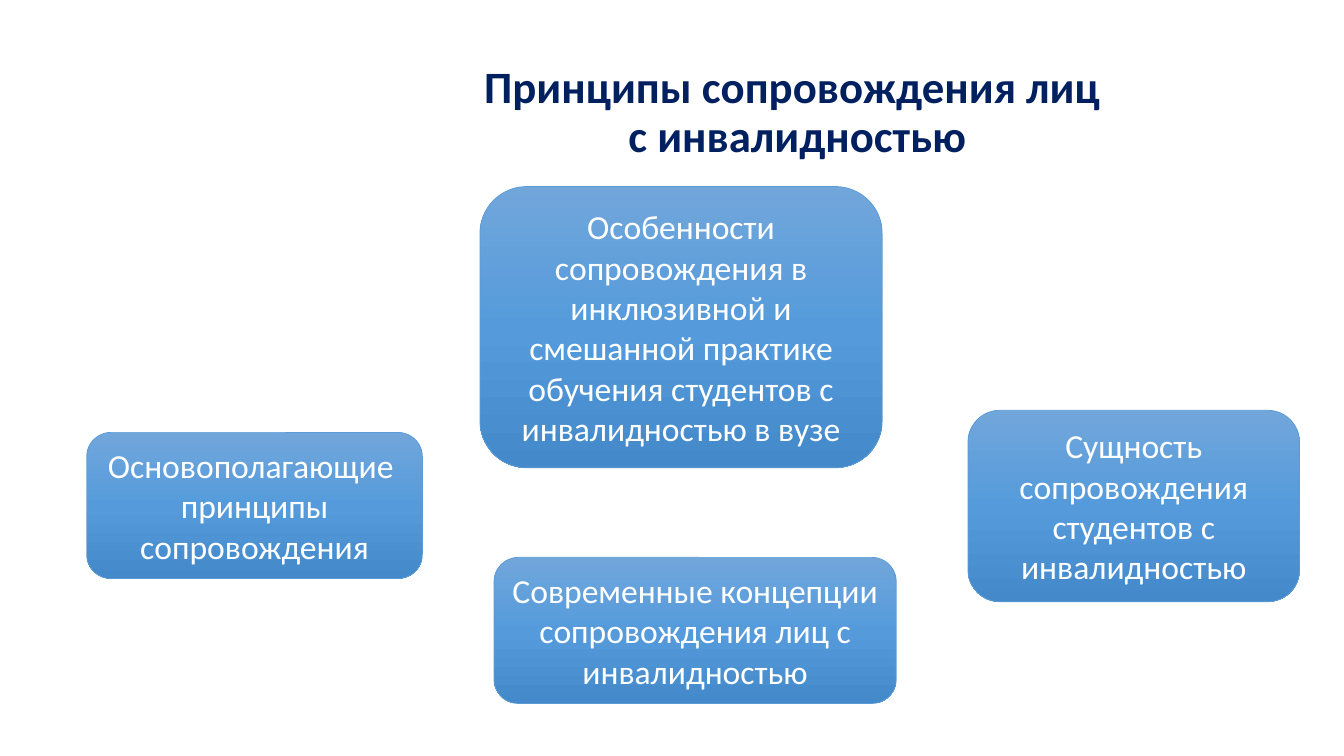
"""Build the slide on principles of supporting people with disabilities."""
from copy import deepcopy
from dataclasses import dataclass

from pptx import Presentation
from pptx.dml.color import RGBColor
from pptx.enum.shapes import MSO_SHAPE
from pptx.enum.text import MSO_ANCHOR, MSO_AUTO_SIZE, PP_ALIGN
from pptx.slide import Slide
from pptx.text.text import TextFrame
from pptx.util import Inches, Pt

SLIDE_WIDTH = Inches(13.33)
SLIDE_HEIGHT = Inches(7.5)
COLORS = {
    "title": "002060",
    "text": "FFFFFF",
    "top": "71A6DB",
    "middle": "559BDB",
    "bottom": "448ACA",
    "outline": "5B9BD5",
}


@dataclass(frozen=True)
class Area:
    """Position and size in percent of the slide."""

    left: float
    top: float
    width: float
    height: float

    def bounds(self) -> tuple[int, int, int, int]:
        """Return left, top, width and height as slide lengths."""
        return (
            int(SLIDE_WIDTH * self.left / 100),
            int(SLIDE_HEIGHT * self.top / 100),
            int(SLIDE_WIDTH * self.width / 100),
            int(SLIDE_HEIGHT * self.height / 100),
        )


@dataclass(frozen=True)
class Topic:
    """A rounded box with its text."""

    text: str
    area: Area


TITLE = Topic("Принципы сопровождения лиц \vс инвалидностью", Area(25.58, 5.33, 67.52, 19.33))
TOPICS = [
    Topic("Основополагающие \nпринципы сопровождения", Area(6.45, 57.2, 24.98, 19.33)),
    Topic("Сущность сопровождения студентов с инвалидностью", Area(72.02, 54.27, 24.68, 25.33)),
    Topic(
        "Особенности сопровождения в инклюзивной и смешанной практике "
        "обучения студентов с инвалидностью в вузе",
        Area(35.71, 24.67, 29.93, 37.2),
    ),
    Topic("Современные концепции сопровождения лиц с инвалидностью", Area(36.76, 73.73, 29.93, 19.33)),
]


def write_text(
    frame: TextFrame, text: str, *, size: int, color: str, bold: bool = False, line_spacing: float = 1.0
) -> None:
    """Fill a text frame with centred, formatted text."""
    frame.word_wrap = True
    frame.vertical_anchor = MSO_ANCHOR.MIDDLE
    frame.text = text
    for paragraph in frame.paragraphs:
        paragraph.alignment = PP_ALIGN.CENTER
        paragraph.line_spacing = line_spacing
        for run in paragraph.runs:
            run.font.name = "Calibri"
            run.font.size = Pt(size)
            run.font.bold = bold
            run.font.color.rgb = RGBColor.from_string(COLORS[color])


def add_title(slide: Slide, title: Topic) -> None:
    """Place and format the title placeholder."""
    shape = slide.shapes.title
    shape.left, shape.top, shape.width, shape.height = title.area.bounds()
    write_text(shape.text_frame, title.text, size=32, color="title", bold=True, line_spacing=0.9)


def add_topic(slide: Slide, topic: Topic) -> None:
    """Draw a rounded box with a vertical three-colour gradient."""
    shape = slide.shapes.add_shape(MSO_SHAPE.ROUNDED_RECTANGLE, *topic.area.bounds())
    shape.shadow.inherit = False
    shape.fill.gradient()
    shape.fill.gradient_angle = 270
    stop_list = shape.fill._fill._gradFill.gsLst
    stop_list.append(deepcopy(stop_list[-1]))
    for index, (stop, name) in enumerate(zip(shape.fill.gradient_stops, ("top", "middle", "bottom"))):
        stop.position = index / 2
        stop.color.rgb = RGBColor.from_string(COLORS[name])
    shape.line.color.rgb = RGBColor.from_string(COLORS["outline"])
    shape.line.width = Pt(0.5)
    write_text(shape.text_frame, topic.text, size=24, color="text")
    shape.text_frame.auto_size = MSO_AUTO_SIZE.SHAPE_TO_FIT_TEXT


def main() -> None:
    """Create and save the presentation."""
    presentation = Presentation()
    presentation.slide_width = SLIDE_WIDTH
    presentation.slide_height = SLIDE_HEIGHT
    slide = presentation.slides.add_slide(presentation.slide_layouts[5])
    add_title(slide, TITLE)
    for topic in TOPICS:
        add_topic(slide, topic)
    presentation.save("out.pptx")


if __name__ == "__main__":
    main()
